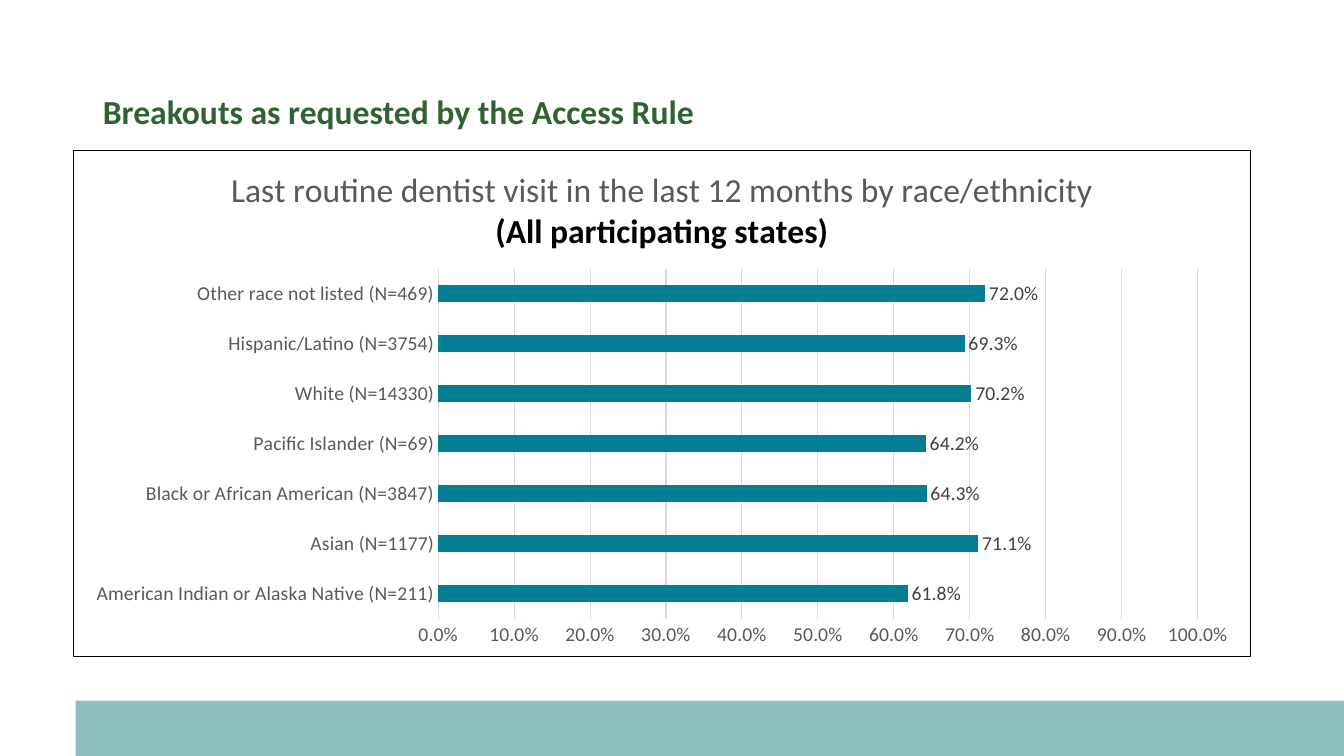
from lxml import etree
from pptx import Presentation
from pptx.chart.data import CategoryChartData
from pptx.dml.color import RGBColor
from pptx.enum.chart import XL_CHART_TYPE, XL_LABEL_POSITION, XL_TICK_MARK
from pptx.enum.shapes import MSO_SHAPE
from pptx.enum.text import MSO_ANCHOR, PP_ALIGN
from pptx.oxml import parse_xml
from pptx.oxml.ns import nsdecls, qn
from pptx.util import Inches, Pt

FONT = "Calibri"
VISITS = [
    ("American Indian or Alaska Native (N=211)", 0.618),
    ("Asian (N=1177)", 0.711),
    ("Black or African American (N=3847)", 0.643),
    ("Pacific Islander (N=69)", 0.642),
    ("White (N=14330)", 0.702),
    ("Hispanic/Latino (N=3754)", 0.693),
    ("Other race not listed (N=469)", 0.72),
]


def rgb(color):
    return RGBColor.from_string(color)


def set_font(font, size, color, bold=False):
    font.name = FONT
    font.size = Pt(size)
    font.bold = bold
    font.color.rgb = rgb(color)


def set_line(line, color):
    line.color.rgb = rgb(color)
    line.width = Pt(0.75)


def add_footer_band(slide, x, y, w, h):
    sp = slide.shapes.add_shape(MSO_SHAPE.RECTANGLE, x, y, w, h)
    sp.shadow.inherit = False
    sp.fill.solid()
    sp.fill.fore_color.rgb = rgb("8EBEBE")
    sp.line.fill.background()


def add_title(slide, x, y, w, h):
    sp = slide.shapes.title
    sp.left, sp.top, sp.width, sp.height = x, y, w, h
    tf = sp.text_frame
    tf.word_wrap = True
    tf.vertical_anchor = MSO_ANCHOR.MIDDLE
    p = tf.paragraphs[0]
    p.alignment = PP_ALIGN.LEFT
    p.line_spacing = 0.9
    r = p.add_run()
    r.text = "Breakouts as requested by the Access Rule"
    set_font(r.font, 24, "316234", True)


def add_chart_title(chart):
    tf = chart.chart_title.text_frame
    lines = [
        ("Last routine dentist visit in the last 12 months by race/ethnicity", "595959", False),
        ("(All participating states)", "000000", True),
    ]
    for i, (text, color, bold) in enumerate(lines):
        p = tf.add_paragraph() if i else tf.paragraphs[0]
        r = p.add_run()
        r.text = text
        set_font(r.font, 24, color, bold)
    chart.chart_title.include_in_layout = False


def place_plot_area(chart, **fractions):
    """Fix the inner plot area as fractions of the chart's size."""
    plot_area = chart._chartSpace.chart.plotArea
    for old in plot_area.findall(qn("c:layout")):
        plot_area.remove(old)
    layout = etree.Element(qn("c:layout"))
    manual = etree.SubElement(layout, qn("c:manualLayout"))
    settings = {"layoutTarget": "inner", "xMode": "edge", "yMode": "edge", **fractions}
    for name, value in settings.items():
        etree.SubElement(manual, qn(f"c:{name}")).set("val", str(value))
    plot_area.insert(0, layout)


def add_border(chart):
    chart._chartSpace.chart.addnext(parse_xml(
        f'<c:spPr {nsdecls("c", "a")}><a:noFill/><a:ln w="{Pt(0.75)}"><a:solidFill>'
        '<a:srgbClr val="000000"/></a:solidFill></a:ln></c:spPr>'))


def format_axes(chart):
    cat, val = chart.category_axis, chart.value_axis
    for axis in (cat, val):
        axis.major_tick_mark = axis.minor_tick_mark = XL_TICK_MARK.NONE
        set_font(axis.tick_labels.font, 14, "595959")
    cat.has_major_gridlines = False
    set_line(cat.format.line, "D9D9D9")
    val.minimum_scale, val.maximum_scale, val.major_unit = 0, 1, 0.1
    val.has_major_gridlines = True
    set_line(val.major_gridlines.format.line, "D9D9D9")
    val.format.line.fill.background()
    val.tick_labels.number_format = "0.0%"
    val.tick_labels.number_format_is_linked = False


def format_bars(plot):
    plot.gap_width = 182
    plot.vary_by_categories = False
    series = plot.series[0]
    series.format.fill.solid()
    series.format.fill.fore_color.rgb = rgb("057E95")
    labels = series.data_labels
    labels.show_value = True
    labels.number_format = "0.0%"
    labels.number_format_is_linked = False
    labels.position = XL_LABEL_POSITION.OUTSIDE_END
    set_font(labels.font, 14, "404040")


def add_visits_chart(slide, x, y, w, h):
    data = CategoryChartData(number_format="0.0%")
    data.categories = [group for group, _ in VISITS]
    data.add_series("Series 1", [share for _, share in VISITS])
    chart = slide.shapes.add_chart(XL_CHART_TYPE.BAR_CLUSTERED, x, y, w, h, data).chart
    set_font(chart.font, 14, "000000")
    chart.has_legend = False
    add_chart_title(chart)
    place_plot_area(chart, x=0.31, y=0.233, w=0.645, h=0.692)
    add_border(chart)
    format_axes(chart)
    format_bars(chart.plots[0])


def main():
    prs = Presentation()
    prs.slide_width, prs.slide_height = Inches(13.33), Inches(7.5)
    slide = prs.slides.add_slide(prs.slide_layouts[5])
    add_footer_band(slide, Inches(0.75), Inches(6.95), Inches(12.58), Inches(0.55))
    add_title(slide, Inches(0.92), Inches(0.4), Inches(11.5), Inches(1.45))
    add_visits_chart(slide, Inches(0.72), Inches(1.49), Inches(11.69), Inches(5.03))
    prs.save("out.pptx")


if __name__ == "__main__":
    main()
